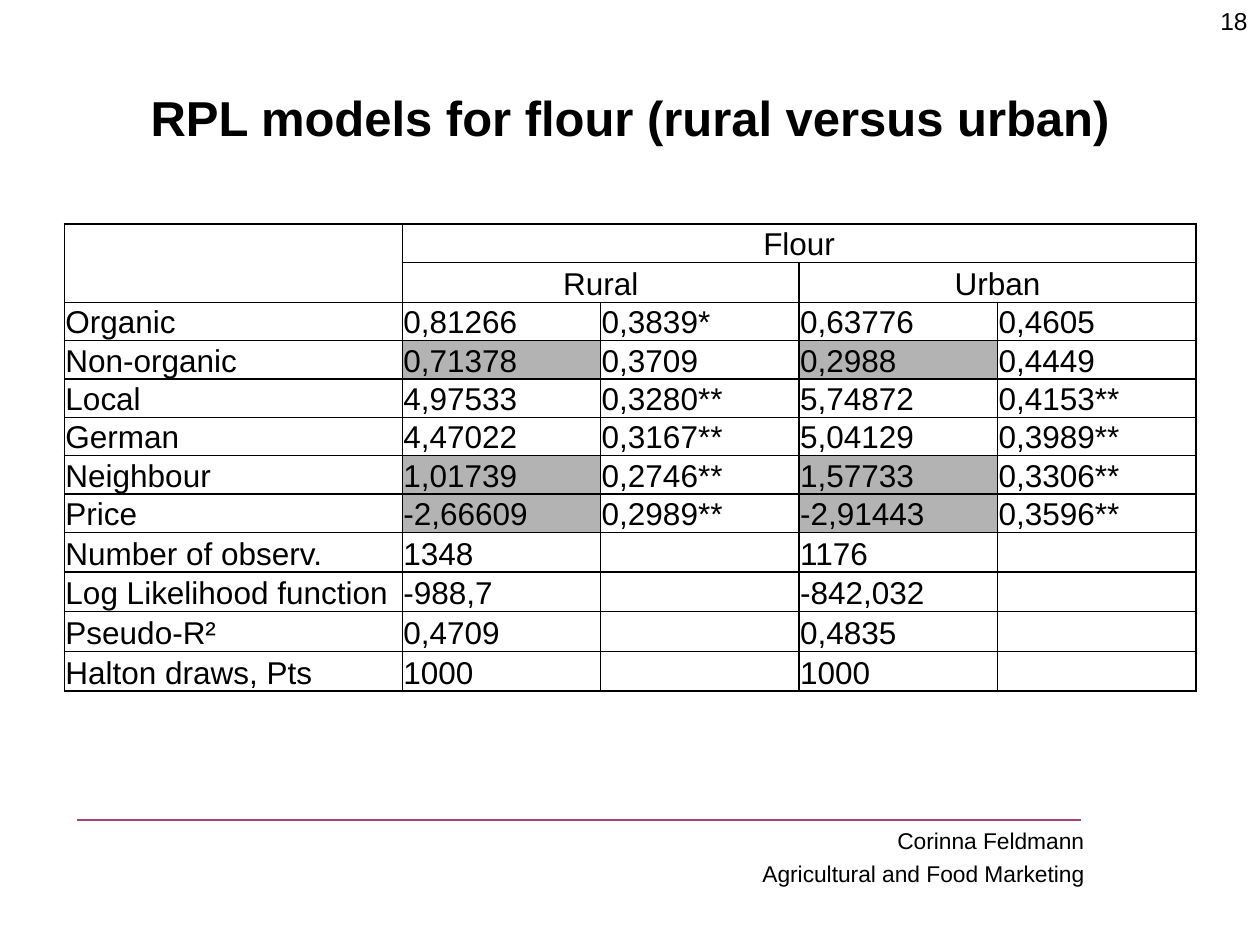
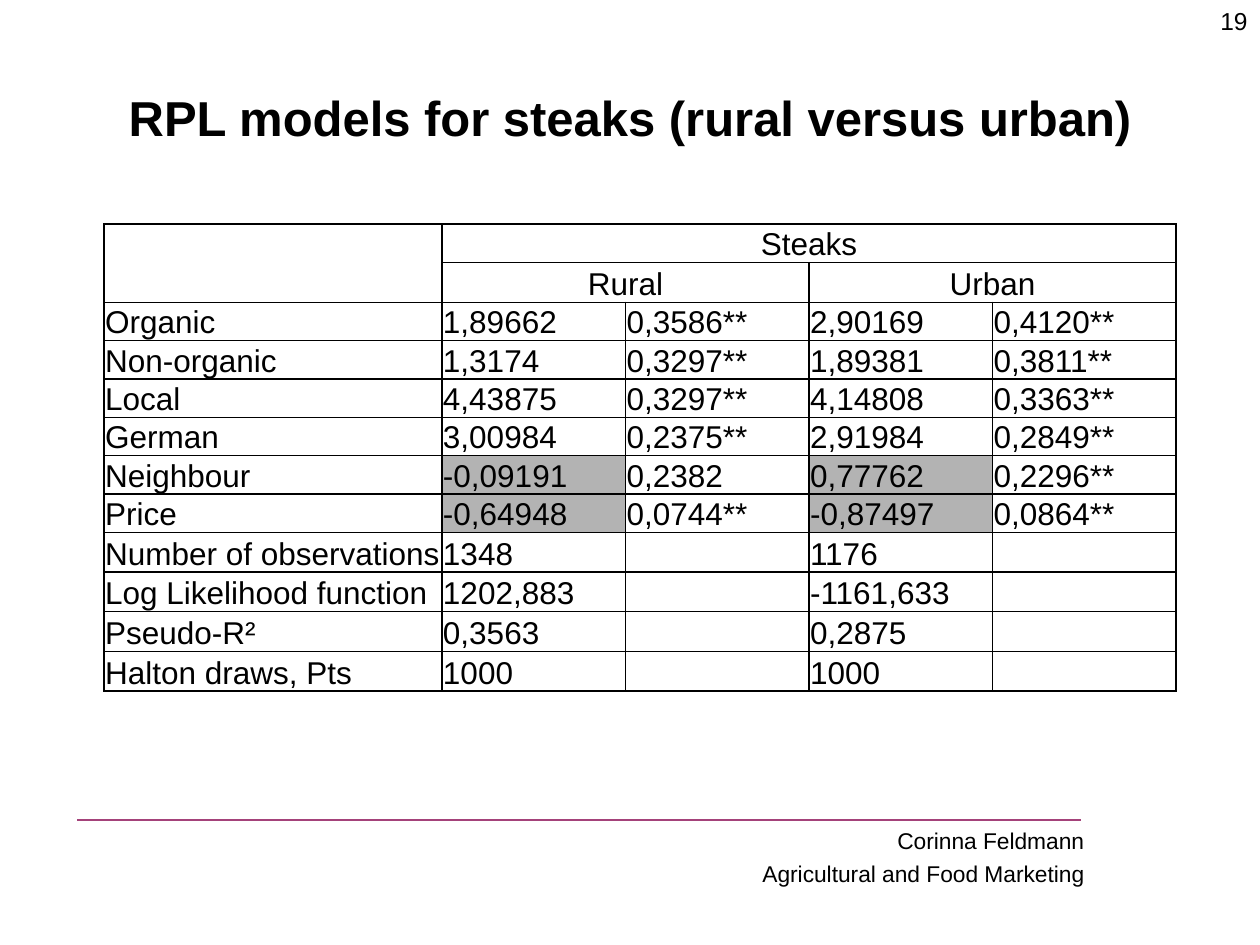
from lxml import etree
from pptx import Presentation
from pptx.dml.color import RGBColor
from pptx.enum.shapes import MSO_CONNECTOR
from pptx.enum.text import MSO_ANCHOR, PP_ALIGN
from pptx.oxml.ns import qn
from pptx.util import Cm, Pt

LEFT, CENTER, RIGHT = PP_ALIGN.LEFT, PP_ALIGN.CENTER, PP_ALIGN.RIGHT
TOP, MIDDLE, BOTTOM = MSO_ANCHOR.TOP, MSO_ANCHOR.MIDDLE, MSO_ANCHOR.BOTTOM
STRAIGHT = MSO_CONNECTOR.STRAIGHT

BLACK, WHITE, GREY, PLUM = "000000", "FFFFFF", "B3B3B3", "A4427A"
AUTHOR = ["Corinna Feldmann", "Agricultural and Food Marketing"]

HEADER_ROWS = 2
LABEL_WIDTH = 6.81
LOW_ROW, HIGH_ROW = 0.74, 0.8
COEFFICIENT_COLUMNS = (1, 3)

FLOUR = [
    ["Organic", "0,81266", "0,3839*", "0,63776", "0,4605"],
    ["Non-organic", "0,71378", "0,3709", "0,2988", "0,4449"],
    ["Local", "4,97533", "0,3280**", "5,74872", "0,4153**"],
    ["German", "4,47022", "0,3167**", "5,04129", "0,3989**"],
    ["Neighbour", "1,01739", "0,2746**", "1,57733", "0,3306**"],
    ["Price", "-2,66609", "0,2989**", "-2,91443", "0,3596**"],
    ["Number of observ.", "1348", "", "1176", ""],
    ["Log Likelihood function", "-988,7", "", "-842,032", ""],
    ["Pseudo-R²", "0,4709", "", "0,4835", ""],
    ["Halton draws, Pts", "1000", "", "1000", ""],
]
STEAKS = [
    ["Organic", "1,89662", "0,3586**", "2,90169", "0,4120**"],
    ["Non-organic", "1,3174", "0,3297**", "1,89381", "0,3811**"],
    ["Local", "4,43875", "0,3297**", "4,14808", "0,3363**"],
    ["German", "3,00984", "0,2375**", "2,91984", "0,2849**"],
    ["Neighbour", "-0,09191", "0,2382", "0,77762", "0,2296**"],
    ["Price", "-0,64948", "0,0744**", "-0,87497", "0,0864**"],
    ["Number of observations", "1348", "", "1176", ""],
    ["Log Likelihood function", "1202,883", "", "-1161,633", ""],
    ["Pseudo-R²", "0,3563", "", "0,2875", ""],
    ["Halton draws, Pts", "1000", "", "1000", ""],
]


def color(hex_code):
    return RGBColor.from_string(hex_code)


def add_borders(cell):
    """Draw a 1 pt black line on all four sides; call before filling the cell."""
    properties = cell._tc.get_or_add_tcPr()
    for side in ("a:lnL", "a:lnR", "a:lnT", "a:lnB"):
        line = etree.SubElement(properties, qn(side), w=str(Pt(1)))
        fill = etree.SubElement(line, qn("a:solidFill"))
        etree.SubElement(fill, qn("a:srgbClr"), val=BLACK)


class Deck:
    """Holds the shared style and the slide being built."""

    font_name = "Arial"

    def __init__(self):
        self.presentation = Presentation()
        self.presentation.slide_width = Cm(25.4)
        self.presentation.slide_height = Cm(19.05)
        self.slide = None

    def style(self, paragraph, size, align, bold=False):
        paragraph.alignment = align
        font = paragraph.font
        font.name, font.size, font.bold = self.font_name, Pt(size), bold
        font.color.rgb = color(BLACK)

    def text(self, lines, box, size, align, anchor=TOP, bold=False):
        frame = self.slide.shapes.add_textbox(*map(Cm, box)).text_frame
        frame.word_wrap = True
        frame.vertical_anchor = anchor
        frame.text = "\n".join(lines)
        for index, paragraph in enumerate(frame.paragraphs):
            self.style(paragraph, size, align, bold)
            if index:
                paragraph.space_before = Pt(3.4)

    def rule(self, left, right, y):
        rule = self.slide.shapes.add_connector(
            STRAIGHT, Cm(right), Cm(y), Cm(left), Cm(y))
        rule.line.color.rgb = color(PLUM)
        rule.line.width = Pt(0.75)
        etree.SubElement(rule._element.spPr, qn("a:effectLst"))

    def new_slide(self, title, number):
        layout = self.presentation.slide_layouts[6]
        self.slide = self.presentation.slides.add_slide(layout)
        self.text(AUTHOR, (11.51, 16.54, 10.59, 1.47), 13, RIGHT)
        self.rule(1.55, 21.79, 16.53)
        self.text([title], (1.27, 0.76, 22.86, 3.18), 28, CENTER, MIDDLE, True)
        self.text([str(number)], (24.1, 0, 1.3, 1.32), 14, RIGHT)

    def model_table(self, product, results, shaded, left, value_width):
        """Add a rural/urban table; shaded names the rows with grey coefficients."""
        rows = [["", product, "", "", ""], ["", "Rural", "", "Urban", ""]] + results
        widths = [LABEL_WIDTH] + [value_width] * 4
        heights = [LOW_ROW, HIGH_ROW] + [LOW_ROW] * 6 + [HIGH_ROW] * 4
        table = self.slide.shapes.add_table(
            len(rows), len(widths), Cm(left), Cm(4.52),
            Cm(sum(widths)), Cm(sum(heights))).table
        table.first_row = table.horz_banding = False
        for column, width in zip(table.columns, widths):
            column.width = Cm(width)
        for row, height in zip(table.rows, heights):
            row.height = Cm(height)

        for r, values in enumerate(rows):
            for c, value in enumerate(values):
                is_grey = values[0] in shaded and c in COEFFICIENT_COLUMNS
                self.cell(table.cell(r, c), value, GREY if is_grey else WHITE,
                          CENTER if r < HEADER_ROWS else LEFT)

        table.cell(0, 0).merge(table.cell(1, 0))
        table.cell(0, 1).merge(table.cell(0, 4))
        for c in COEFFICIENT_COLUMNS:
            table.cell(1, c).merge(table.cell(1, c + 1))

    def cell(self, cell, value, fill, align):
        cell.text = value
        cell.vertical_anchor = BOTTOM
        cell.margin_left = cell.margin_right = Cm(0.02)
        cell.margin_top, cell.margin_bottom = Cm(0.01), 0
        self.style(cell.text_frame.paragraphs[0], 18, align)
        add_borders(cell)
        cell.fill.solid()
        cell.fill.fore_color.rgb = color(fill)


def main():
    deck = Deck()
    deck.new_slide("RPL models for flour (rural versus urban)", 18)
    deck.model_table("Flour", FLOUR, ("Non-organic", "Neighbour", "Price"), 1.3, 4)
    deck.new_slide("RPL models for steaks (rural versus urban)", 19)
    deck.model_table("Steaks", STEAKS, ("Neighbour", "Price"), 2.1, 3.7)
    deck.presentation.save("out.pptx")


if __name__ == "__main__":
    main()
